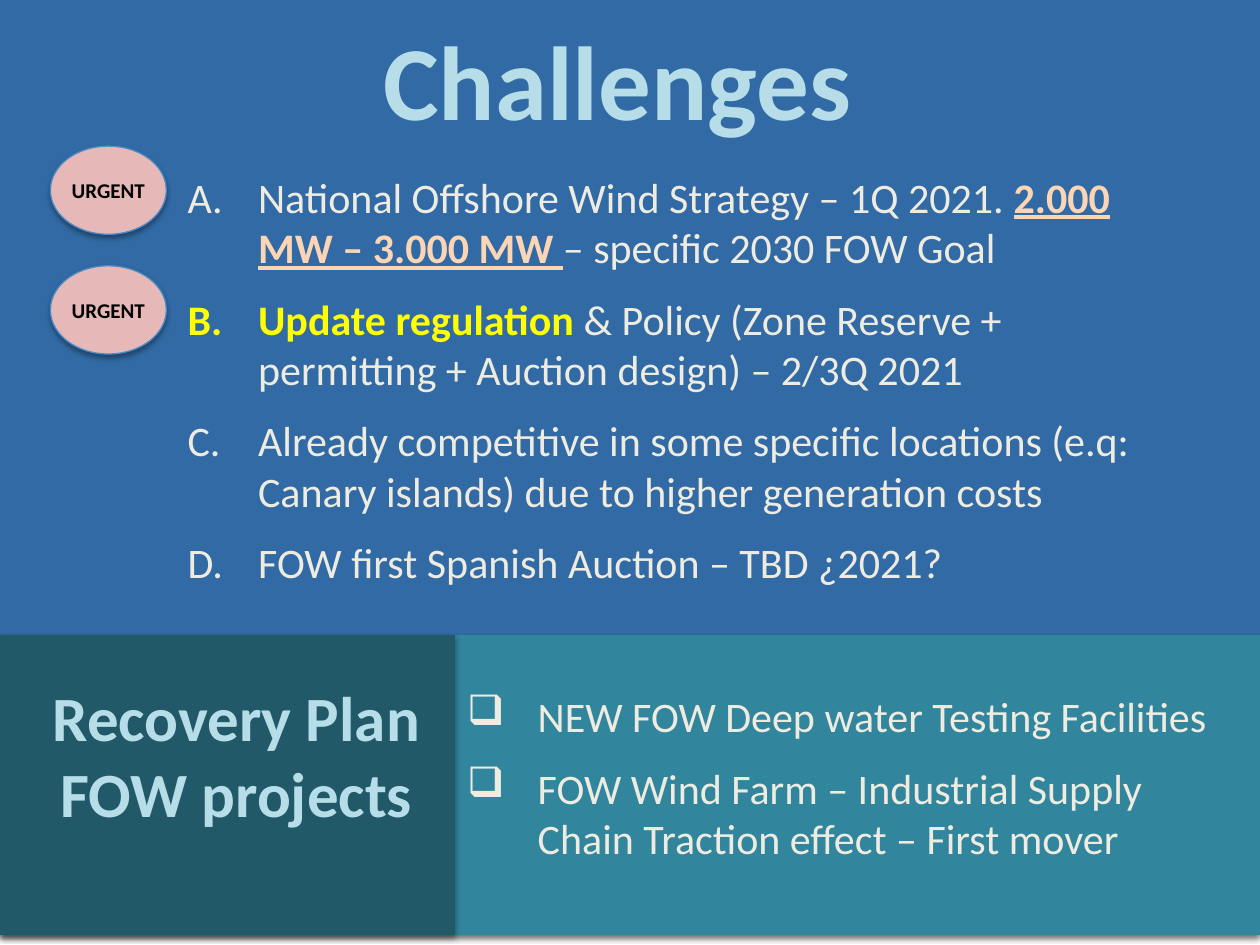
from lxml import etree
from pptx import Presentation
from pptx.dml.color import RGBColor
from pptx.enum import shapes, text
from pptx.oxml import ns
from pptx.util import Inches, Pt

FONT = "Calibri"
PALE_BLUE, CREAM, PEACH, YELLOW = "B7DEE8", "EEECE1", "FCD5B5", "FFFF00"

CHALLENGES = [
    [("National Offshore Wind Strategy – 1Q 2021. ", {}),
     ("2.000 MW – 3.000 MW", {"color": PEACH, "bold": True, "underline": True}),
     (" ", {"color": PEACH, "underline": True}),
     ("– specific 2030 FOW Goal", {})],
    [("Update regulation ", {"color": YELLOW, "bold": True}),
     ("& Policy (Zone Reserve + permitting + Auction design) – 2/3Q 2021", {})],
    [("Already competitive in some specific locations (e.q: Canary islands) "
      "due to higher generation costs", {})],
    [("FOW first Spanish Auction – TBD ¿2021?", {})],
]
PROJECTS = [
    [("NEW FOW Deep water Testing Facilities", {})],
    [("FOW Wind Farm – Industrial Supply Chain Traction effect – First mover", {})],
]


def rgb(value):
    return RGBColor.from_string(value)


def sub(parent, tag, **attributes):
    return etree.SubElement(parent, ns.qn(tag), attributes)


def set_font(font, size, color, bold=False):
    font.name = FONT
    font.size = Pt(size)
    font.bold = bold
    font.color.rgb = rgb(color)


def add_panel(slide, box, fill, kind=shapes.MSO_SHAPE.RECTANGLE, line=None):
    """Filled shape with a soft shadow falling straight down."""
    panel = slide.shapes.add_shape(kind, *map(Inches, box))
    panel.fill.solid()
    panel.fill.fore_color.rgb = rgb(fill)
    if line:
        panel.line.color.rgb = rgb(line)
        panel.line.width = Pt(0.75)
    else:
        panel.line.fill.background()
    panel.shadow.inherit = False
    effects = panel._element.spPr.find(ns.qn("a:effectLst"))
    shadow = sub(effects, "a:outerShdw", blurRad=str(Pt(3.1)), dist=str(Pt(1.8)),
                 dir="5400000", rotWithShape="0")
    sub(sub(shadow, "a:srgbClr", val="000000"), "a:alpha", val="35000")
    return panel


def add_text_frame(slide, box, anchor=text.MSO_ANCHOR.MIDDLE):
    frame = slide.shapes.add_textbox(*map(Inches, box)).text_frame
    frame.word_wrap = True
    frame.vertical_anchor = anchor
    return frame


def add_heading(slide, box, wording, size):
    heading = add_text_frame(slide, box).paragraphs[0]
    heading.text = wording
    heading.alignment = text.PP_ALIGN.CENTER
    set_font(heading.font, size, PALE_BLUE, bold=True)


def add_list(slide, box, items, bullet, anchor=text.MSO_ANCHOR.MIDDLE):
    """List with hanging indents; bullet is a tag and its attributes."""
    tag, attributes = bullet
    frame = add_text_frame(slide, box, anchor)
    for index, runs in enumerate(items):
        item = frame.add_paragraph() if index else frame.paragraphs[0]
        properties = item._p.get_or_add_pPr()
        properties.set("marL", str(Inches(0.56)))
        properties.set("indent", str(-Inches(0.56)))
        if index:
            item.space_before = Pt(12)
        sub(properties, tag, **attributes)
        set_font(item.font, 24, CREAM)
        for wording, style in runs:
            run = item.add_run()
            run.text = wording
            if "color" in style:
                run.font.color.rgb = rgb(style["color"])
            if "bold" in style:
                run.font.bold = style["bold"]
            if "underline" in style:
                run.font.underline = style["underline"]


def add_urgent_badge(slide, left, top):
    badge = add_panel(slide, (left, top, 0.92, 0.7), "E6B9B8",
                      shapes.MSO_SHAPE.OVAL, line="4D8BC9")
    frame = badge.text_frame
    frame.margin_left = frame.margin_right = 0
    frame.vertical_anchor = text.MSO_ANCHOR.MIDDLE
    label = frame.paragraphs[0]
    label.text = "URGENT"
    label.alignment = text.PP_ALIGN.CENTER
    set_font(label.font, 12, "000000", bold=True)


def add_challenges(slide, left, top, width, height):
    add_panel(slide, (left, top, width, height), "316AA4")
    add_heading(slide, (left + 0.4, top + 0.16, width - 1, 1.09), "Challenges", 60)
    add_list(slide, (left + 1.39, top + 1.39, 8.01, 3.41), CHALLENGES,
             ("a:buAutoNum", {"type": "alphaUcPeriod"}), text.MSO_ANCHOR.TOP)
    for row in range(2):
        add_urgent_badge(slide, left + 0.4, top + 1.24 + row * 0.95)


def add_recovery_plan(slide, left, top, width, height):
    add_panel(slide, (left, top, width, height), "31859C")
    add_list(slide, (left + 3.61, top + 0.1, 6.2, 2.05), PROJECTS,
             ("a:buChar", {"char": "❑"}))
    add_panel(slide, (left, top, 3.61, height), "215968")
    add_heading(slide, (left, top + 0.4, 3.75, 1.09), "Recovery Plan FOW projects", 36)


def main():
    deck = Presentation()
    deck.slide_width, deck.slide_height = Inches(10), Inches(7.5)
    slide = deck.slides.add_slide(deck.slide_layouts[6])
    add_challenges(slide, 0, -0.08, 10, 7.5)
    add_recovery_plan(slide, 0, 5.04, 10, 2.38)
    deck.save("out.pptx")


if __name__ == "__main__":
    main()
